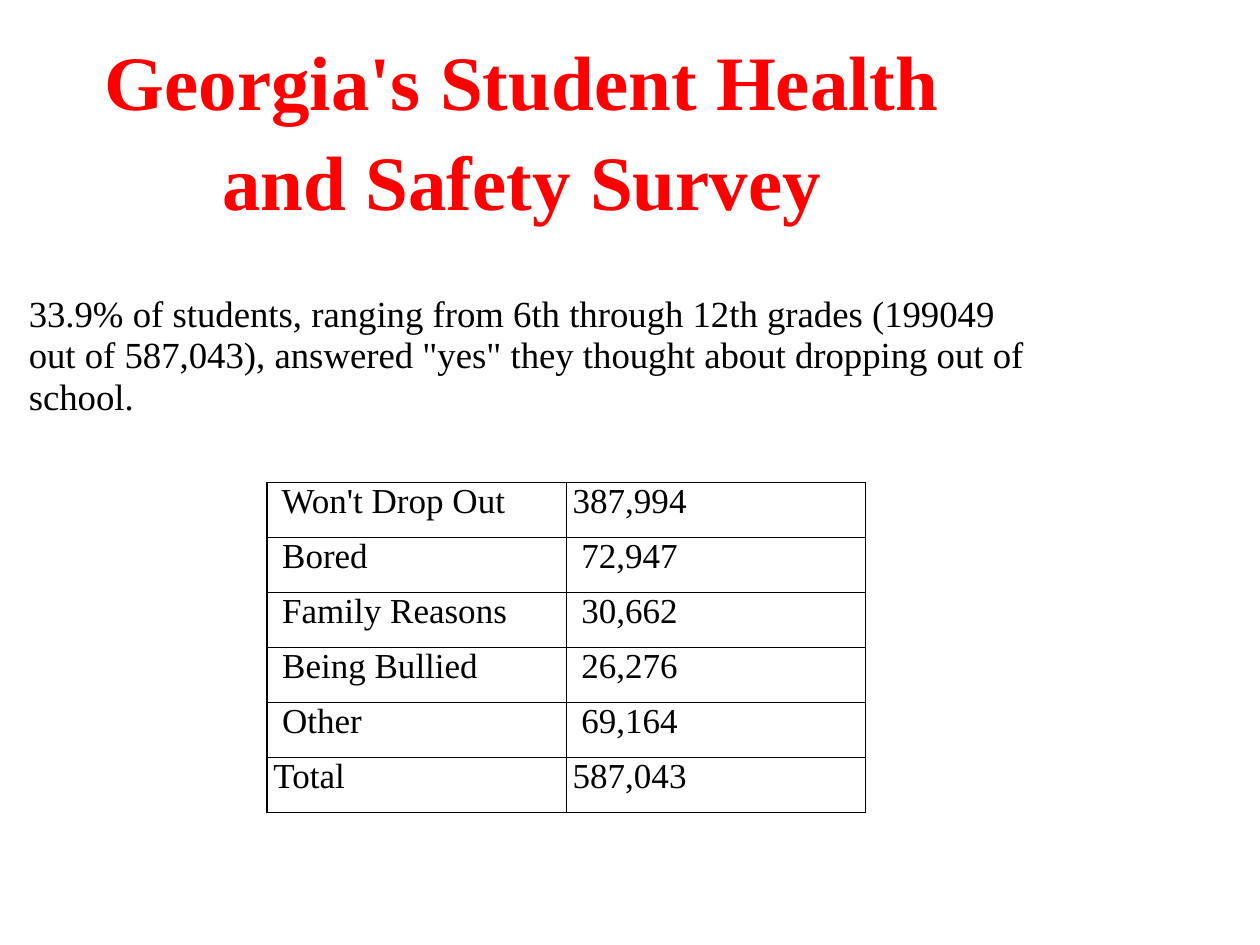
from lxml import etree
from pptx import Presentation
from pptx.dml.color import RGBColor
from pptx.enum.text import PP_ALIGN
from pptx.oxml.ns import qn
from pptx.util import Inches, Pt

CENTER, LEFT = PP_ALIGN.CENTER, PP_ALIGN.LEFT
FONT = "Times New Roman"
COLORS = {"title": "FF0000", "text": "000000", "border": "000000"}

TITLE = ["Georgia's Student Health ", "and Safety Survey "]
FINDING = ("33.9% of students, ranging from 6th through 12th grades (199049 out of "
           "587,043), answered \"yes\" they thought about dropping out of school. ")
ANSWERS = [
    (" Won't Drop Out", "387,994"),
    (" Bored", " 72,947"),
    (" Family Reasons", " 30,662"),
    (" Being Bullied", " 26,276"),
    (" Other", " 69,164"),
    ("Total", "587,043"),
]


def style(p, text, size, color, bold=False, align=LEFT):
    p.text = text
    p.alignment = align
    p.font.name = FONT
    p.font.size = Pt(size)
    p.font.bold = bold
    p.font.color.rgb = RGBColor.from_string(COLORS[color])


def add_borders(cell):
    tc_pr = cell._tc.get_or_add_tcPr()
    for i, side in enumerate(("lnL", "lnR", "lnT", "lnB")):
        ln = etree.Element(qn(f"a:{side}"), w=str(Pt(1)))
        fill = etree.SubElement(ln, qn("a:solidFill"))
        etree.SubElement(fill, qn("a:srgbClr"), val=COLORS["border"])
        tc_pr.insert(i, ln)


prs = Presentation()
prs.slide_width, prs.slide_height = Inches(10), Inches(7.5)
s = prs.slides.add_slide(prs.slide_layouts[6])

tf = s.shapes.add_textbox(Inches(0.13), Inches(0.28), Inches(8.18), Inches(4.95)).text_frame
tf.word_wrap = True
paragraphs = [(line, 44, "title", True, CENTER, 7.5) for line in TITLE]
paragraphs.append((FINDING, 21, "text", False, LEFT, 37.7))
for i, (text, size, color, bold, align, before) in enumerate(paragraphs):
    p = tf.add_paragraph() if i else tf.paragraphs[0]
    style(p, text, size, color, bold, align)
    p.line_spacing = 0.94
    p.space_before = Pt(before)

table = s.shapes.add_table(len(ANSWERS), 2, Inches(2.12), Inches(3.83),
                           Inches(4.75), Inches(2.62)).table
table.first_row = table.horz_banding = False
for row, answer in zip(table.rows, ANSWERS):
    for cell, text in zip(row.cells, answer):
        cell.margin_left = cell.margin_right = Inches(0.05)
        cell.margin_top = cell.margin_bottom = 0
        cell.fill.background()
        add_borders(cell)
        style(cell.text_frame.paragraphs[0], text, 20, "text")

prs.save("out.pptx")
